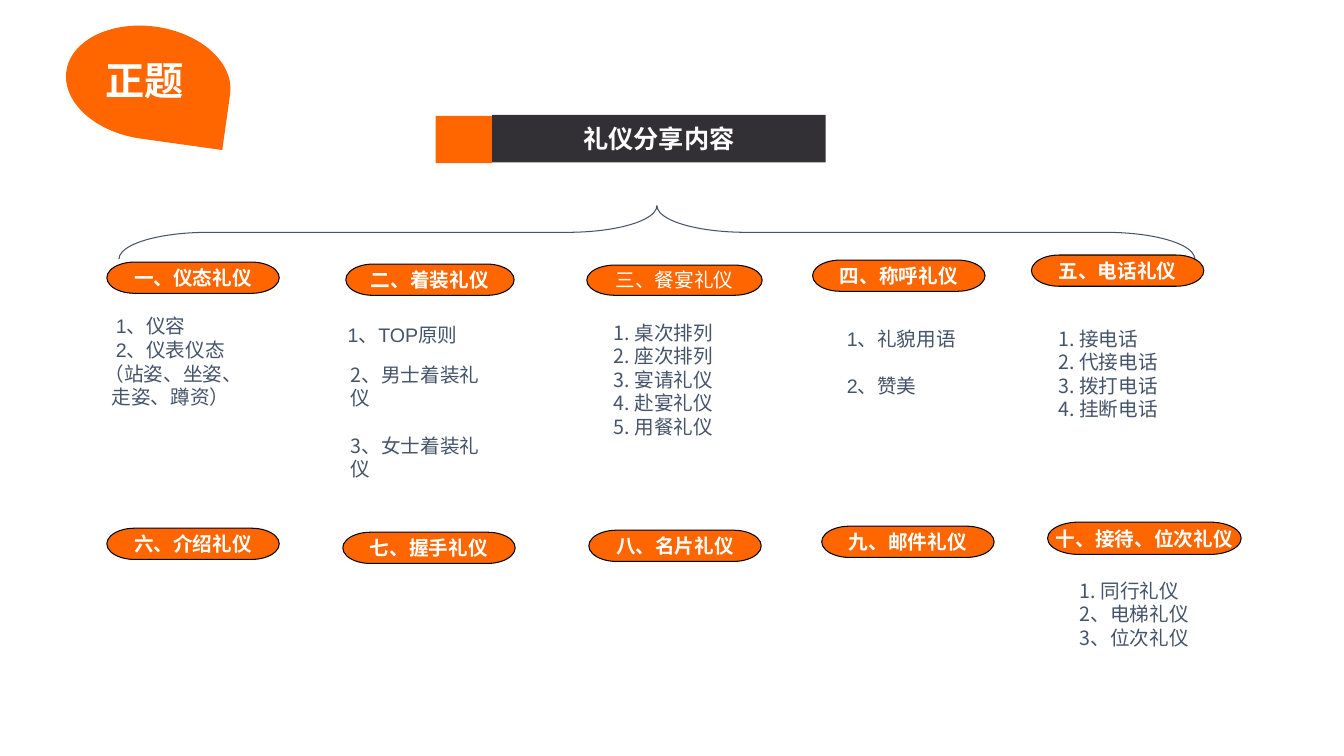
import pptx
import pptx.dml.color
import pptx.enum.shapes
import pptx.enum.text
import pptx.oxml.ns
import pptx.util
import lxml.etree

PX = 9144
ORANGE, DARK, SLATE, WHITE, BLACK = "FF6600", "323034", "44546A", "FFFFFF", "000000"
SANS, CJK = "Arial", "Noto Sans CJK SC"
SHAPES = pptx.enum.shapes.MSO_SHAPE
CENTER = pptx.enum.text.PP_ALIGN.CENTER
MIDDLE = pptx.enum.text.MSO_ANCHOR.MIDDLE
GAP = 17

TOPICS = [
    ("一、仪态礼仪", (106, 260, 171, 31)),
    ("二、着装礼仪", (343, 262, 167, 31)),
    ("三、餐宴礼仪", (582, 263, 174, 30)),
    ("四、称呼礼仪", (806, 258, 171, 31)),
    ("五、电话礼仪", (1023, 253, 171, 31)),
    ("六、介绍礼仪", (106, 524, 171, 31)),
    ("七、握手礼仪", (340, 528, 171, 31)),
    ("八、名片礼仪", (584, 526, 171, 31)),
    ("九、邮件礼仪", (815, 522, 171, 31)),
    ("十、接待、位次礼仪", (1039, 518, 192, 32)),
]
PLAIN_TOPIC = "三、餐宴礼仪"

DETAILS = [
    ((81, 307, 256, 110), SANS, 0, [24, 24, 13, 20],
     ["1、仪容", "2、仪表仪态", "（站姿、坐姿、", "走姿、蹲资）"]),
    ((335, 315, 168, 40), SANS, 0, [], ["1、TOP原则"]),
    ((338, 355, 166, 125), CJK, GAP, [], ["2、男士着装礼仪", "3、女士着装礼仪"]),
    ((599, 313, 127, 127), CJK, 0, [],
     ["1. 桌次排列", "2. 座次排列", "3. 宴请礼仪", "4. 赴宴礼仪", "5. 用餐礼仪"]),
    ((830, 319, 128, 103), SANS, GAP, [], ["1、礼貌用语", "2、赞美"]),
    ((1040, 319, 127, 103), CJK, 0, [],
     ["1. 接电话", "2. 代接电话", "3. 拨打电话", "4. 挂断电话"]),
    ((1061, 569, 141, 80), CJK, 0, [], ["1. 同行礼仪", "2、电梯礼仪", "3、位次礼仪"]),
]


def color(value):
    """Return the colour for a hex string."""
    return pptx.dml.color.RGBColor.from_string(value)


def scaled(box):
    """Turn a box in px into EMU lengths."""
    return [length * PX for length in box]


def format_paragraph(paragraph, size, name, value, bold=False):
    """Set the font of every run in a paragraph."""
    for run in paragraph.runs:
        run.font.size = pptx.util.Pt(size)
        run.font.name = name
        run.font.bold = bold
        run.font.color.rgb = color(value)
        properties = run.font._element
        east_asian = lxml.etree.SubElement(properties, pptx.oxml.ns.qn("a:ea"))
        east_asian.set("typeface", CJK)


def add_filled_shape(slide, kind, box, fill, line=None):
    """Add a preset shape with a flat fill and an optional outline."""
    shape = slide.shapes.add_shape(kind, *scaled(box))
    shape.shadow.inherit = False
    shape.fill.solid()
    shape.fill.fore_color.rgb = color(fill)
    if line:
        shape.line.color.rgb = color(line)
        shape.line.width = pptx.util.Pt(0.75)
    else:
        shape.line.fill.background()
    return shape


def add_heading(slide, box):
    """Place the title bar with the orange block at its left."""
    left, top, width, height = box
    block = 56
    title = slide.shapes.title
    title.left, title.top, title.width, title.height = scaled(
        (left + block, top, width - block, height))
    title.fill.solid()
    title.fill.fore_color.rgb = color(DARK)
    title.text_frame.text = "礼仪分享内容"
    title.text_frame.vertical_anchor = MIDDLE
    title.text_frame.paragraphs[0].alignment = CENTER
    format_paragraph(title.text_frame.paragraphs[0], 18, CJK, WHITE, True)
    add_filled_shape(slide, SHAPES.RECTANGLE, (left, top + 1, block, height), ORANGE)


def add_brace(slide, box):
    """Place a brace that opens downwards over the box."""
    left, top, width, height = box
    upright = (left + (width - height) // 2, top + (height - width) // 2, height, width)
    brace = add_filled_shape(slide, SHAPES.LEFT_BRACE, upright, WHITE, SLATE)
    brace.rotation = 90
    brace.adjustments[0] = 1.67
    brace.adjustments[1] = 0.5


def add_topic(slide, box, label):
    """Place one topic pill."""
    pill = add_filled_shape(slide, SHAPES.FLOWCHART_TERMINATOR, box, ORANGE, BLACK)
    frame = pill.text_frame
    frame.text = label
    frame.word_wrap = False
    frame.vertical_anchor = MIDDLE
    frame.paragraphs[0].alignment = CENTER
    plain = label == PLAIN_TOPIC
    format_paragraph(frame.paragraphs[0], 14, CJK if plain else SANS, WHITE, not plain)


def add_details(slide, box, name, gap, indents, lines):
    """Place the list of points under a topic."""
    frame = slide.shapes.add_textbox(*scaled(box)).text_frame
    frame.word_wrap = True
    frame.text = "\n".join(lines)
    for index, paragraph in enumerate(frame.paragraphs):
        paragraph.line_spacing = pptx.util.Pt(16.8)
        if index and gap:
            paragraph.space_before = pptx.util.Pt(gap)
        if indents:
            paragraph._p.get_or_add_pPr().set("marL", str(indents[index] * PX))
        format_paragraph(paragraph, 14, name, SLATE)


def add_badge(slide, box):
    """Place the tilted drop and its section label."""
    left, top, width, height = box
    upright = (left + (width - height) // 2, top + (height - width) // 2, height, width)
    drop = add_filled_shape(slide, SHAPES.TEAR, upright, ORANGE)
    drop.rotation = 98
    label = slide.shapes.add_textbox(*scaled((left + 30, top + 25, 98, 57)))
    label.text_frame.word_wrap = False
    label.text_frame.text = "正题"
    format_paragraph(label.text_frame.paragraphs[0], 28, SANS, WHITE, True)


def main():
    """Build the slide and save it."""
    presentation = pptx.Presentation()
    presentation.slide_width, presentation.slide_height = scaled((1333, 750))
    slide = presentation.slides.add_slide(presentation.slide_layouts[5])
    add_heading(slide, (432, 114, 387, 47))
    add_brace(slide, (118, 204, 1067, 53))
    for label, box in TOPICS:
        add_topic(slide, box, label)
    for box, name, gap, indents, lines in DETAILS:
        add_details(slide, box, name, gap, indents, lines)
    add_badge(slide, (65, 26, 164, 112))
    presentation.save("out.pptx")


if __name__ == "__main__":
    main()
